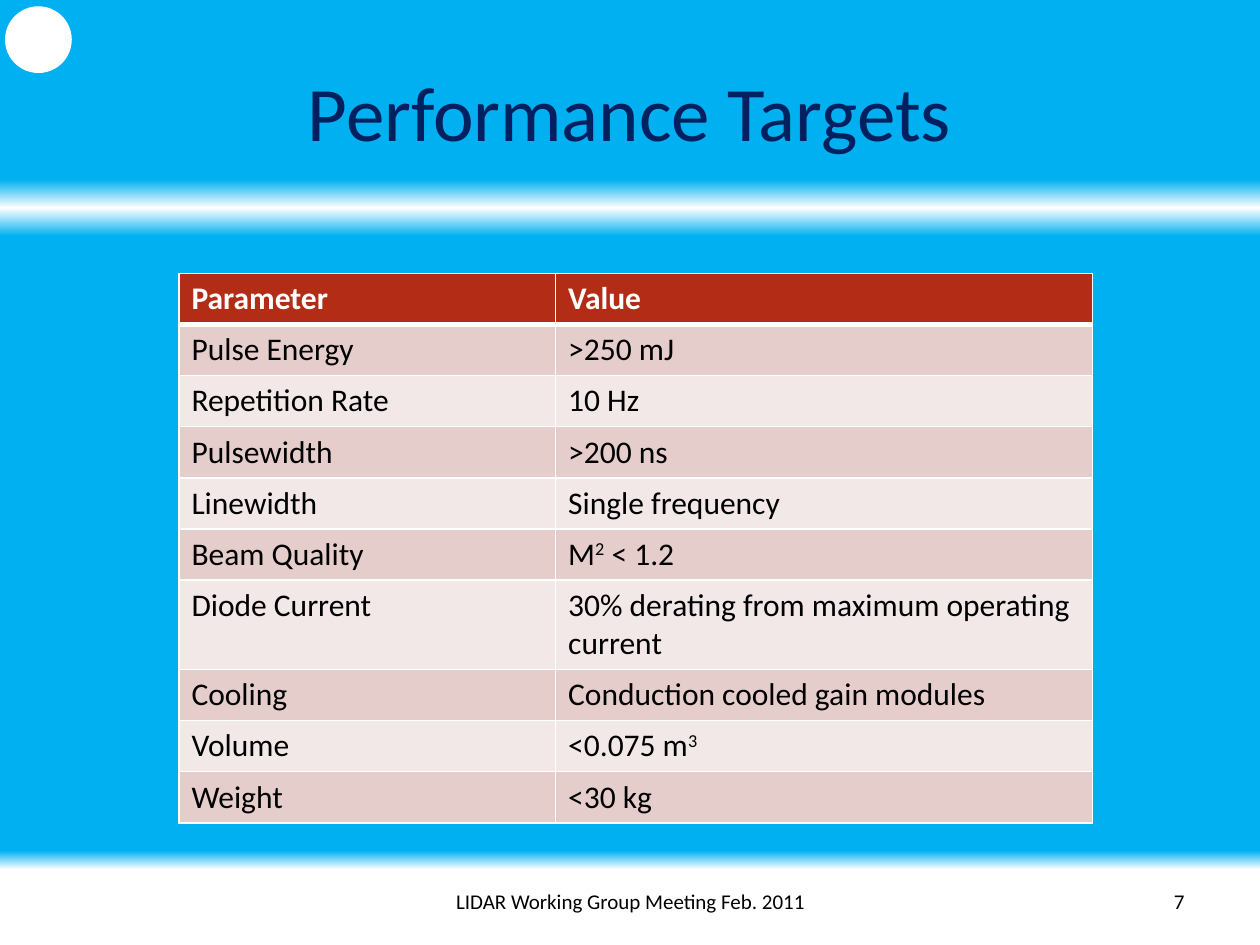
from lxml.etree import SubElement
from pptx import Presentation
from pptx.dml.color import RGBColor
from pptx.enum.shapes import MSO_SHAPE
from pptx.enum.text import MSO_ANCHOR, PP_ALIGN
from pptx.oxml.ns import qn
from pptx.util import Inches, Pt

SKY = "00B0F0"
WHITE = "FFFFFF"
STOPS = [(19, SKY), (22, WHITE), (25, SKY), (90, SKY), (92, WHITE)]
ROWS = [
    ("Parameter", "Value"),
    ("Pulse Energy", ">250 mJ"),
    ("Repetition Rate", "10 Hz"),
    ("Pulsewidth", ">200 ns"),
    ("Linewidth", "Single frequency"),
    ("Beam Quality", "M^2^ < 1.2"),
    ("Diode Current", "30% derating from maximum operating current"),
    ("Cooling", "Conduction cooled gain modules"),
    ("Volume", "<0.075 m^3^"),
    ("Weight", "<30 kg"),
]


def color(code):
    return RGBColor.from_string(code)


def write(frame, words, size=18, ink="000000", bold=False,
          align=PP_ALIGN.LEFT, anchor=MSO_ANCHOR.TOP):
    frame.word_wrap = True
    frame.vertical_anchor = anchor
    para = frame.paragraphs[0]
    para.alignment = align
    for turn, part in enumerate(words.split("^")):
        if not part:
            continue
        run = para.add_run()
        run.text = part
        font = run.font
        font.name, font.size, font.bold = "Calibri", Pt(size), bold
        font.color.rgb = color(ink)
        if turn % 2:
            run._r.get_or_add_rPr().set("baseline", "30000")


def backdrop(slide):
    fill = slide.background.fill
    fill.gradient()
    fill.gradient_angle = 270
    stops = slide._element.find(".//" + qn("a:gsLst"))
    for old in list(stops):
        stops.remove(old)
    for place, code in STOPS:
        stop = SubElement(stops, qn("a:gs"), pos=str(place * 1000))
        SubElement(stop, qn("a:srgbClr"), val=code)


def badge(slide, left, top, width, height):
    disc = slide.shapes.add_shape(MSO_SHAPE.OVAL, left, top, width, height)
    disc.shadow.inherit = False
    disc.fill.solid()
    disc.fill.fore_color.rgb = color(WHITE)
    disc.line.fill.background()


def heading(slide, left, top, width, height):
    title = slide.shapes.title
    title.left, title.top, title.width, title.height = left, top, width, height
    write(title.text_frame, "Performance Targets", size=44, ink="002060",
          align=PP_ALIGN.CENTER, anchor=MSO_ANCHOR.MIDDLE)


def border(cell, **widths):
    props = cell._tc.get_or_add_tcPr()
    for side in "LRTB":
        line = SubElement(props, qn("a:ln" + side), w=str(Pt(widths.get(side, 1))))
        fill = SubElement(line, qn("a:solidFill"))
        SubElement(fill, qn("a:srgbClr"), val=WHITE)


def targets(slide, left, top, width, height):
    table = slide.shapes.add_table(len(ROWS), 2, left, top, width, height).table
    table.columns[0].width = Inches(2.99)
    table.columns[1].width = width - Inches(2.99)
    for i, row in enumerate(ROWS):
        head = i == 0
        shade = "B32C16" if head else ("F2E8E8", "E5CDCC")[i % 2]
        for j, words in enumerate(row):
            cell = table.cell(i, j)
            border(cell, T=3 if i == 1 else 1, B=3 if head else 1)
            cell.fill.solid()
            cell.fill.fore_color.rgb = color(shade)
            write(cell.text_frame, words, bold=head,
                  ink=WHITE if head else "000000")


def footer(slide, left, top, width, height, words, align):
    box = slide.shapes.add_textbox(left, top, width, height)
    write(box.text_frame, words, size=12, align=align, anchor=MSO_ANCHOR.MIDDLE)


def main():
    deck = Presentation()
    deck.slide_width, deck.slide_height = Inches(10), Inches(7.5)
    slide = deck.slides.add_slide(deck.slide_layouts[5])
    backdrop(slide)
    badge(slide, Inches(0.04), Inches(0.05), Inches(0.53), Inches(0.53))
    heading(slide, Inches(0.5), Inches(0.25), Inches(9), Inches(1.25))
    targets(slide, Inches(1.42), Inches(2.17), Inches(7.25), Inches(4))
    footer(slide, Inches(7.17), Inches(6.95), Inches(2.33), Inches(0.4),
           "7", PP_ALIGN.RIGHT)
    footer(slide, Inches(3.42), Inches(6.95), Inches(3.17), Inches(0.4),
           "LIDAR Working Group Meeting Feb. 2011", PP_ALIGN.CENTER)
    deck.save("out.pptx")


if __name__ == "__main__":
    main()
